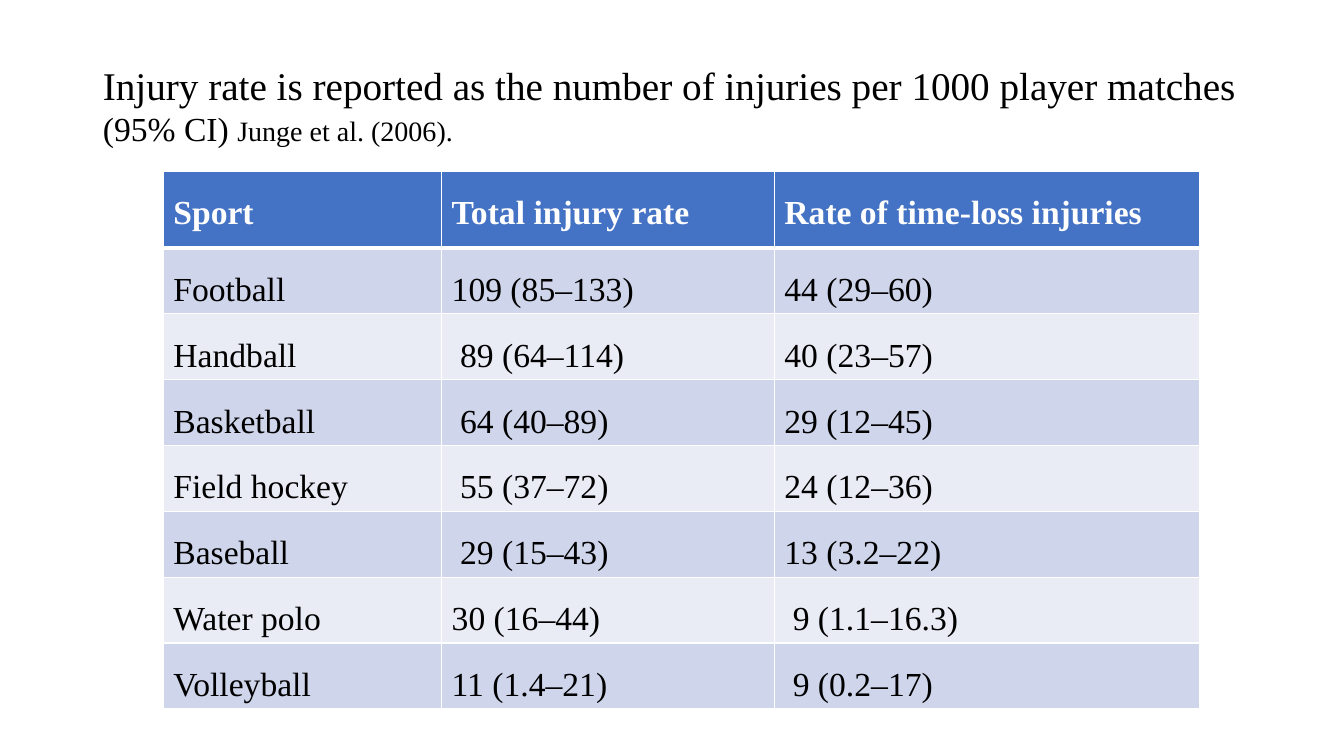
"""Builds a slide with a table of injury rates by sport."""
from dataclasses import dataclass

from lxml.etree import SubElement
from pptx import Presentation
from pptx.dml.color import RGBColor
from pptx.enum.text import MSO_ANCHOR, MSO_AUTO_SIZE, PP_ALIGN
from pptx.oxml.ns import qn
from pptx.slide import Slide
from pptx.table import _Cell
from pptx.util import Emu, Pt

EMU_PER_PX = 9144
FONT_NAME = "Times New Roman"
BLACK = RGBColor(0x00, 0x00, 0x00)
WHITE = RGBColor(0xFF, 0xFF, 0xFF)
HEADER_BLUE = RGBColor(0x44, 0x72, 0xC4)
BANDS = (RGBColor(0xCF, 0xD5, 0xEA), RGBColor(0xE9, 0xEB, 0xF5))

COLUMN_WIDTHS = (276, 330, 422)
HEADER_HEIGHT = 76
ROW_HEIGHT = 64
THIN = 1
THICK = 3


@dataclass(frozen=True)
class TitlePart:
    text: str
    size: int


@dataclass(frozen=True)
class InjuryRow:
    sport: str
    total_rate: str
    time_loss_rate: str


TITLE_PARTS = (
    TitlePart("Injury rate is reported as the number of injuries per 1000 player matches ", 28),
    TitlePart("(95% CI) ", 24),
    TitlePart("Junge et al. (2006).", 20),
)
ROWS = (
    InjuryRow("Sport", "Total injury rate", "Rate of time-loss injuries"),
    InjuryRow("Football", "109 (85–133)", "44 (29–60)"),
    InjuryRow("Handball", " 89 (64–114)", "40 (23–57)"),
    InjuryRow("Basketball", " 64 (40–89)", "29 (12–45)"),
    InjuryRow("Field hockey", " 55 (37–72)", "24 (12–36)"),
    InjuryRow("Baseball", " 29 (15–43)", "13 (3.2–22)"),
    InjuryRow("Water polo", "30 (16–44)", " 9 (1.1–16.3)"),
    InjuryRow("Volleyball", "11 (1.4–21)", " 9 (0.2–17)"),
)


def px(length: int) -> Emu:
    return Emu(length * EMU_PER_PX)


def add_title(slide: Slide) -> None:
    title = slide.shapes.title
    title.left, title.top, title.width, title.height = map(px, (92, 55, 1169, 98))
    frame = title.text_frame
    frame.word_wrap = True
    frame.auto_size = MSO_AUTO_SIZE.NONE
    frame.vertical_anchor = MSO_ANCHOR.MIDDLE
    paragraph = frame.paragraphs[0]
    paragraph.alignment = PP_ALIGN.LEFT
    paragraph.font.name = FONT_NAME
    paragraph.font.color.rgb = BLACK
    for part in TITLE_PARTS:
        run = paragraph.add_run()
        run.text = part.text
        run.font.size = Pt(part.size)


def set_borders(cell: _Cell, top: int, bottom: int) -> None:
    properties = cell._tc.get_or_add_tcPr()
    widths = {"a:lnL": THIN, "a:lnR": THIN, "a:lnT": top, "a:lnB": bottom}
    for tag, width in widths.items():
        line = SubElement(properties, qn(tag), w=str(Pt(width)))
        fill = SubElement(line, qn("a:solidFill"))
        SubElement(fill, qn("a:srgbClr"), val=str(WHITE))


def fill_cell(cell: _Cell, text: str, row_index: int) -> None:
    is_header = row_index == 0
    set_borders(
        cell,
        top=THICK if row_index == 1 else THIN,
        bottom=THICK if is_header else THIN,
    )
    cell.fill.solid()
    cell.fill.fore_color.rgb = HEADER_BLUE if is_header else BANDS[(row_index - 1) % 2]
    cell.text = text
    paragraph = cell.text_frame.paragraphs[0]
    paragraph.line_spacing = 1.5
    paragraph.font.name = FONT_NAME
    paragraph.font.size = Pt(24)
    paragraph.font.bold = is_header
    paragraph.font.color.rgb = WHITE if is_header else BLACK


def add_injury_table(slide: Slide) -> None:
    height = HEADER_HEIGHT + ROW_HEIGHT * (len(ROWS) - 1)
    table = slide.shapes.add_table(
        len(ROWS), len(COLUMN_WIDTHS),
        px(162), px(170), px(sum(COLUMN_WIDTHS)), px(height),
    ).table
    for column, width in zip(table.columns, COLUMN_WIDTHS):
        column.width = px(width)
    for row_index, entry in enumerate(ROWS):
        row = table.rows[row_index]
        row.height = px(ROW_HEIGHT if row_index else HEADER_HEIGHT)
        texts = (entry.sport, entry.total_rate, entry.time_loss_rate)
        for cell, text in zip(row.cells, texts):
            fill_cell(cell, text, row_index)


def main() -> None:
    presentation = Presentation()
    presentation.slide_width = px(1333)
    presentation.slide_height = px(750)
    slide = presentation.slides.add_slide(presentation.slide_layouts[5])
    add_title(slide)
    add_injury_table(slide)
    presentation.save("out.pptx")


if __name__ == "__main__":
    main()
